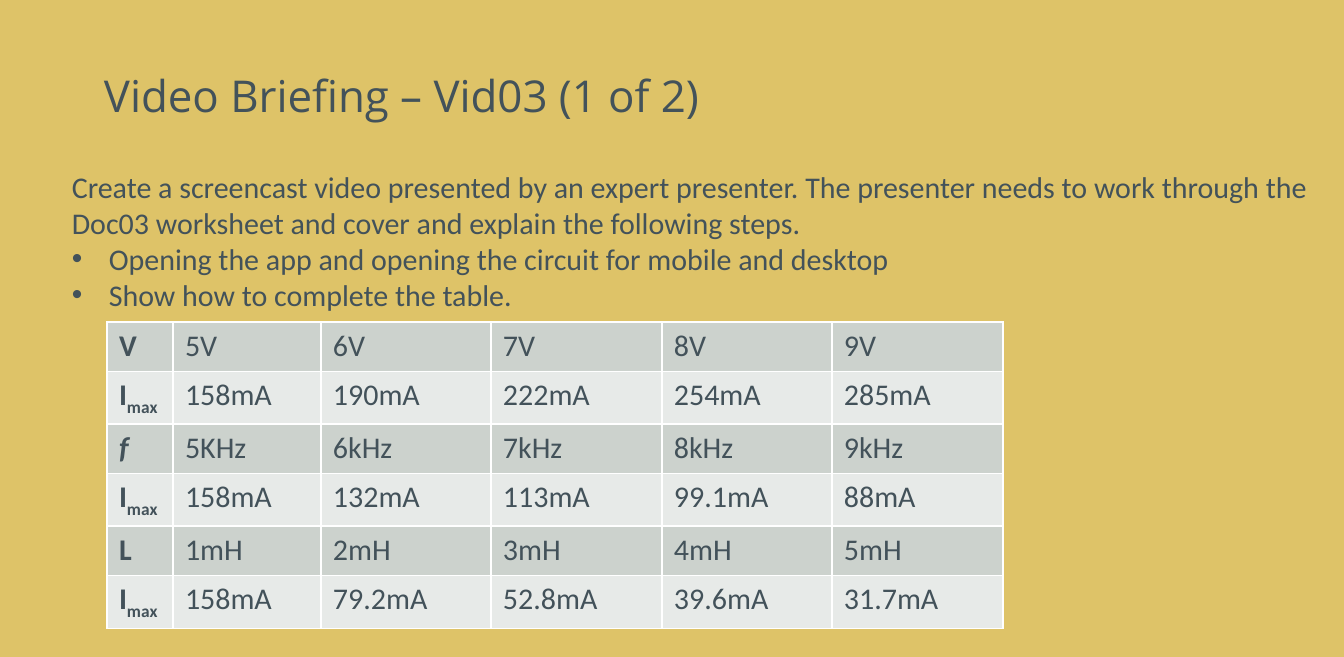
from dataclasses import dataclass

from lxml import etree
from pptx import Presentation
from pptx import util as u
from pptx.dml.color import RGBColor
from pptx.enum import text
from pptx.oxml import ns

PX = 914400 // 120


@dataclass(frozen=True)
class Theme:
    background: str = "DEC368"
    ink: str = "43525A"
    bands: tuple = ("CCD2CD", "E7EAE8")
    border: str = "FFFFFF"
    title_font: str = "Open Sans"
    body_font: str = "Calibri"
    title_size: float = 26.3
    body_size: float = 18


THEME = Theme()
TITLE = "Video Briefing – Vid03 (1 of 2)"
BRIEF = ("Create a screencast video presented by an expert presenter. The presenter needs "
         "to work through the Doc03 worksheet and cover and explain the following steps.")
STEPS = ["Opening the app and opening the circuit for mobile and desktop",
         "Show how to complete the table."]
READINGS = [
    ("V", "5V 6V 7V 8V 9V"),
    ("I", "158mA 190mA 222mA 254mA 285mA"),
    ("f", "5KHz 6kHz 7kHz 8kHz 9kHz"),
    ("I", "158mA 132mA 113mA 99.1mA 88mA"),
    ("L", "1mH 2mH 3mH 4mH 5mH"),
    ("I", "158mA 79.2mA 52.8mA 39.6mA 31.7mA"),
]
COLUMN_WIDTHS = [66, 148, 170, 171, 170, 171]
ROW_HEIGHT = 49


def px(*lengths):
    return [u.Emu(length * PX) for length in lengths]


def add_run(para, words, font=THEME.body_font, size=THEME.body_size, bold=False, italic=False):
    span = para.add_run()
    span.text = words
    span.font.name = font
    span.font.size = u.Pt(size)
    span.font.bold = bold
    span.font.italic = italic
    span.font.color.rgb = RGBColor.from_string(THEME.ink)
    return span


def add_bullet(para, indent):
    props = para._p.get_or_add_pPr()
    props.set("marL", str(indent * PX))
    props.set("indent", str(-indent * PX))
    etree.SubElement(props, ns.qn("a:buFont"), typeface="Arial")
    etree.SubElement(props, ns.qn("a:buChar"), char="•")


def set_title(page):
    title = page.shapes.title
    title.left, title.top, title.width, title.height = px(92, 35, 1159, 127)
    frame = title.text_frame
    frame.auto_size = text.MSO_AUTO_SIZE.NONE
    frame.vertical_anchor = text.MSO_ANCHOR.MIDDLE
    para = frame.paragraphs[0]
    para.alignment = text.PP_ALIGN.LEFT
    para.line_spacing = 0.9
    add_run(para, TITLE, THEME.title_font, THEME.title_size)


def add_brief(page):
    box = page.shapes.add_textbox(*px(60, 162, 1266, 157))
    frame = box.text_frame
    frame.word_wrap = True
    frame.auto_size = text.MSO_AUTO_SIZE.SHAPE_TO_FIT_TEXT
    add_run(frame.paragraphs[0], BRIEF)
    for step in STEPS:
        para = frame.add_paragraph()
        add_bullet(para, 37)
        add_run(para, step)


def format_cell(cell, fill):
    """Fill the cell and draw a 1 pt border on each side."""
    cell.fill.solid()
    cell.fill.fore_color.rgb = RGBColor.from_string(fill)
    props = cell._tc.get_or_add_tcPr()
    for position, side in enumerate(("lnL", "lnR", "lnT", "lnB")):
        line = etree.Element(ns.qn(f"a:{side}"), w=str(u.Pt(1)))
        solid = etree.SubElement(line, ns.qn("a:solidFill"))
        etree.SubElement(solid, ns.qn("a:srgbClr"), val=THEME.border)
        props.insert(position, line)


def add_symbol(para, symbol):
    """Write a quantity symbol; current carries the subscript max."""
    add_run(para, symbol, bold=True, italic=symbol == "f")
    if symbol == "I":
        subscript = add_run(para, "max", bold=True)
        subscript.font._element.set("baseline", "-25000")


def add_readings(page):
    size = px(sum(COLUMN_WIDTHS), ROW_HEIGHT * len(READINGS))
    frame = page.shapes.add_table(len(READINGS), len(COLUMN_WIDTHS), *px(107, 322), *size)
    table = frame.table
    for column, width in zip(table.columns, px(*COLUMN_WIDTHS)):
        column.width = width
    for index, (symbol, values) in enumerate(READINGS):
        row = table.rows[index]
        row.height = px(ROW_HEIGHT)[0]
        for cell in row.cells:
            format_cell(cell, THEME.bands[index % 2])
        symbol_cell, *value_cells = row.cells
        add_symbol(symbol_cell.text_frame.paragraphs[0], symbol)
        for cell, value in zip(value_cells, values.split()):
            add_run(cell.text_frame.paragraphs[0], value)


def main():
    deck = Presentation()
    deck.slide_width = u.Inches(11.2)
    deck.slide_height = u.Pt(394)
    page = deck.slides.add_slide(deck.slide_layouts[5])
    page.background.fill.solid()
    page.background.fill.fore_color.rgb = RGBColor.from_string(THEME.background)
    set_title(page)
    add_brief(page)
    add_readings(page)
    deck.save("out.pptx")


if __name__ == "__main__":
    main()
